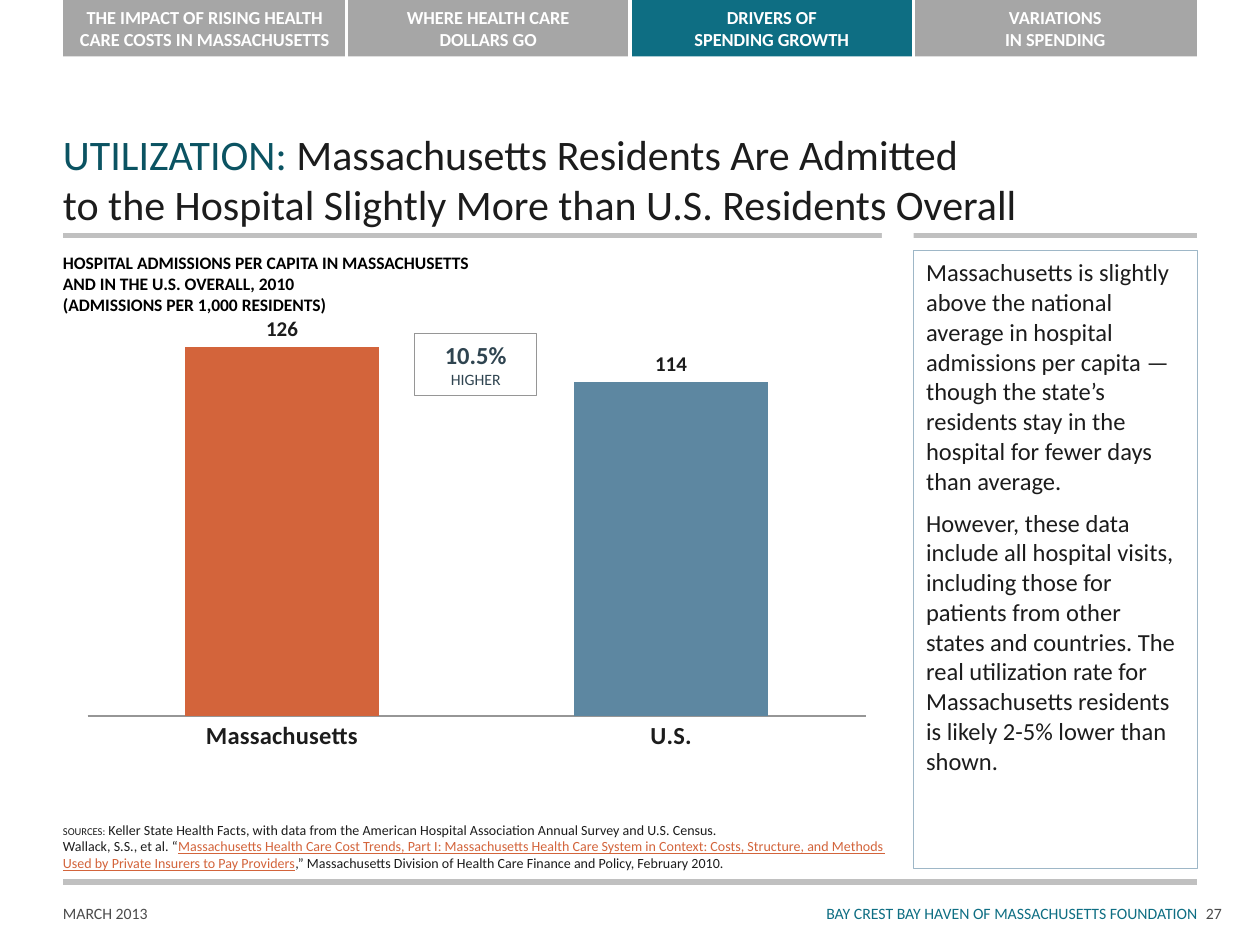
"""Build the hospital admissions slide with its chart and commentary."""
import lxml.etree
import pptx
import pptx.chart.data
import pptx.dml.color
import pptx.enum.chart
import pptx.enum.shapes
import pptx.enum.text
import pptx.oxml.ns
import pptx.util

Cm = pptx.util.Cm
Pt = pptx.util.Pt
RGBColor = pptx.dml.color.RGBColor
ALIGN = pptx.enum.text.PP_ALIGN
ANCHOR = pptx.enum.text.MSO_ANCHOR
RECT = pptx.enum.shapes.MSO_SHAPE.RECTANGLE

WHITE = RGBColor(0xFF, 0xFF, 0xFF)
BLACK = RGBColor(0, 0, 0)
INK = RGBColor(0x1C, 0x1C, 0x1C)
GREY = RGBColor(0x4B, 0x4B, 0x4B)
RULE = RGBColor(0xC0, 0xC0, 0xC0)
TAB = RGBColor(0xA6, 0xA6, 0xA6)
TEAL = RGBColor(0x0E, 0x6E, 0x83)
DEEP = RGBColor(0x0B, 0x53, 0x62)
SLATE = RGBColor(0x2F, 0x44, 0x50)
EDGE = RGBColor(0x96, 0x96, 0x96)
FRAME = RGBColor(0x9E, 0xB7, 0xC7)
RUST = RGBColor(0xD3, 0x64, 0x3B)
BLUE = RGBColor(0x5D, 0x87, 0xA1)


def style(runs, size, color, bold=False):
    for run in runs:
        run.font.name = "Calibri"
        run.font.size = Pt(size)
        run.font.color.rgb = color
        run.font.bold = bold


def place(box, fill, line, width, text, size, color, bold, align, anchor, inset):
    if fill is not None:
        box.fill.solid()
        box.fill.fore_color.rgb = fill
    else:
        box.fill.background()
    if line is not None:
        box.line.color.rgb = line
        box.line.width = Pt(width)
    else:
        box.line.fill.background()
    box.shadow.inherit = False
    frame = box.text_frame
    frame.word_wrap = True
    frame.vertical_anchor = anchor
    frame.margin_left = frame.margin_right = Cm(inset[0])
    frame.margin_top = frame.margin_bottom = Cm(inset[1])
    frame.text = text
    for para in frame.paragraphs:
        para.alignment = align
        style(para.runs, size, color, bold)
    return frame


deck = pptx.Presentation()
deck.slide_width = Cm(25.4)
deck.slide_height = Cm(19.05)
slide = deck.slides.add_slide(deck.slide_layouts[6])
shapes = slide.shapes

left, right = 1.27, 24.13
step = (right - left) / 4
high = 1.14
tabs = [
    ("THE IMPACT OF RISING HEALTH CARE COSTS IN MASSACHUSETTS", TAB),
    ("WHERE HEALTH CARE\vDOLLARS GO", TAB),
    ("DRIVERS OF\vSPENDING GROWTH", TEAL),
    ("VARIATIONS\vIN SPENDING", TAB),
]
for i, (text, fill) in enumerate(tabs):
    box = shapes.add_shape(RECT, Cm(left + i * step), 0, Cm(step), Cm(high))
    place(box, fill, None, 0, text, 10.5, WHITE, True, ALIGN.CENTER,
          ANCHOR.BOTTOM, (0.13, 0.13))

lines = [(left, y, right, y, RULE, 3) for y in (4.75, 17.78)]
lines += [(left + i * step, 0, left + i * step, high, WHITE, 2) for i in (1, 2, 3)]
for x, y, end, base, color, width in lines:
    line = shapes.add_connector(pptx.enum.shapes.MSO_CONNECTOR.STRAIGHT,
                                Cm(x), Cm(y), Cm(end), Cm(base))
    line.line.color.rgb = color
    line.line.width = Pt(width)
    lxml.etree.SubElement(line._element.spPr, pptx.oxml.ns.qn("a:effectLst"))

feet = [
    (13.18, 10.95, "BAY CREST BAY HAVEN OF MASSACHUSETTS FOUNDATION", TEAL, ALIGN.RIGHT),
    (left, 2.54, "MARCH 2013", GREY, ALIGN.LEFT),
    (24.31, 1.09, "27", GREY, ALIGN.LEFT),
]
for x, wide, text, color, align in feet:
    box = shapes.add_textbox(Cm(x), Cm(18.21), Cm(wide), Cm(0.81))
    place(box, None, None, 0, text, 9, color, False, align, ANCHOR.TOP, (0, 0))

box = shapes.add_textbox(Cm(left), Cm(2.54), Cm(22.86), Cm(2.21))
title = place(box, None, None, 0, "UTILIZATION:", 24, DEEP, False, ALIGN.LEFT,
              ANCHOR.BOTTOM, (0, 0.13)).paragraphs[0]
title.add_run().text = " Massachusetts Residents Are Admitted "
title.add_line_break()
title.add_run().text = "to the Hospital Slightly More than U.S. Residents Overall"
style(title.runs[1:], 24, INK)

box = shapes.add_textbox(Cm(left), Cm(16.43), Cm(17.07), Cm(1.27))
notes = place(box, None, None, 0, "SOURCES:\nWallack, S.S., et al. “", 8, INK, False,
              ALIGN.LEFT, ANCHOR.BOTTOM, (0, 0.13)).paragraphs
style(notes[0].runs, 6, INK)
parts = [
    (0, " Keller State Health Facts, with data from the American Hospital "
        "Association Annual Survey and U.S. Census.", INK),
    (1, "Massachusetts Health Care Cost Trends, Part I: Massachusetts Health Care "
        "System in Context: Costs, Structure, and Methods Used by Private Insurers "
        "to Pay Providers", RUST),
    (1, ",” Massachusetts Division of Health Care Finance and Policy, "
        "February 2010.", INK),
]
for i, text, color in parts:
    run = notes[i].add_run()
    run.text = text
    style([run], 8, color)
    run.font.underline = color == RUST

body = (
    "Massachusetts is slightly above the national average in hospital admissions "
    "per capita — though the state’s residents stay in the hospital for fewer days "
    "than average.\n"
    "However, these data include all hospital visits, including those for patients "
    "from other states and countries. The real utilization rate for Massachusetts "
    "residents is likely 2-5% lower than shown."
)
box = shapes.add_shape(RECT, Cm(18.42), Cm(5.05), Cm(5.72), Cm(12.45))
frame = place(box, None, FRAME, 0.25, body, 14, INK, False, ALIGN.LEFT,
              ANCHOR.TOP, (0.25, 0.13))
for para in frame.paragraphs:
    para.line_spacing = Pt(17)
    para.space_before = Pt(7)

box = shapes.add_shape(RECT, Cm(17.78), Cm(4.55), Cm(0.64), Cm(0.33))
place(box, WHITE, None, 0, "", 9, INK, False, ALIGN.LEFT, ANCHOR.TOP, (0, 0))

data = pptx.chart.data.CategoryChartData(number_format="#,##0")
data.categories = ["Massachusetts", "U.S."]
data.add_series("Series 1", [126, 114])
chart = shapes.add_chart(pptx.enum.chart.XL_CHART_TYPE.COLUMN_CLUSTERED, Cm(left),
                         Cm(6.17), Cm(16.51), Cm(9.5), data).chart
chart.has_legend = False
chart.has_title = False
chart.font.name = "Calibri"
chart.font.size = Pt(18)
chart.font.color.rgb = INK
cats = chart.category_axis
cats.major_tick_mark = pptx.enum.chart.XL_TICK_MARK.NONE
cats.tick_labels.font.size = Pt(14)
cats.tick_labels.font.bold = True
cats.format.line.color.rgb = EDGE
vals = chart.value_axis
vals.visible = False
vals.has_major_gridlines = False
vals.minimum_scale = 0
vals.maximum_scale = 140
plot = chart.plots[0]
plot.gap_width = 100
plot.overlap = 100
plot.vary_by_categories = False
bars = plot.series[0]
bars.format.fill.solid()
bars.format.fill.fore_color.rgb = RUST
point = bars.points[1].format.fill
point.solid()
point.fore_color.rgb = BLUE
tags = bars.data_labels
tags.show_value = True
tags.position = pptx.enum.chart.XL_LABEL_POSITION.OUTSIDE_END
tags.number_format = "#,##0"
tags.number_format_is_linked = False
tags.font.size = Pt(12)
tags.font.bold = True

area = chart._chartSpace.chart.plotArea
for old in area.findall(pptx.oxml.ns.qn("c:layout")):
    area.remove(old)
layout = lxml.etree.Element(pptx.oxml.ns.qn("c:layout"))
manual = lxml.etree.SubElement(layout, pptx.oxml.ns.qn("c:manualLayout"))
for tag, val in [("layoutTarget", "inner"), ("xMode", "edge"), ("yMode", "edge"),
                 ("x", "0.03"), ("y", "0"), ("w", "0.95"), ("h", "0.87")]:
    lxml.etree.SubElement(manual, pptx.oxml.ns.qn("c:" + tag)).set("val", val)
area.insert(0, layout)

head = ("HOSPITAL ADMISSIONS PER CAPITA IN MASSACHUSETTS AND IN THE U.S. OVERALL, 2010\n"
        "(ADMISSIONS PER 1,000 RESIDENTS)")
box = shapes.add_textbox(Cm(left), Cm(4.95), Cm(8.71), Cm(0.69))
place(box, None, None, 0, head, 10, BLACK, True, ALIGN.LEFT, ANCHOR.TOP,
      (0, 0.13)).word_wrap = False

box = shapes.add_shape(RECT, Cm(8.36), Cm(6.73), Cm(2.46), Cm(1.24))
frame = place(box, WHITE, EDGE, 0.75, "10.5%\nHIGHER", 14, SLATE, True, ALIGN.CENTER,
              ANCHOR.MIDDLE, (0.25, 0.13))
style(frame.paragraphs[1].runs, 9, SLATE)

deck.save("out.pptx")
